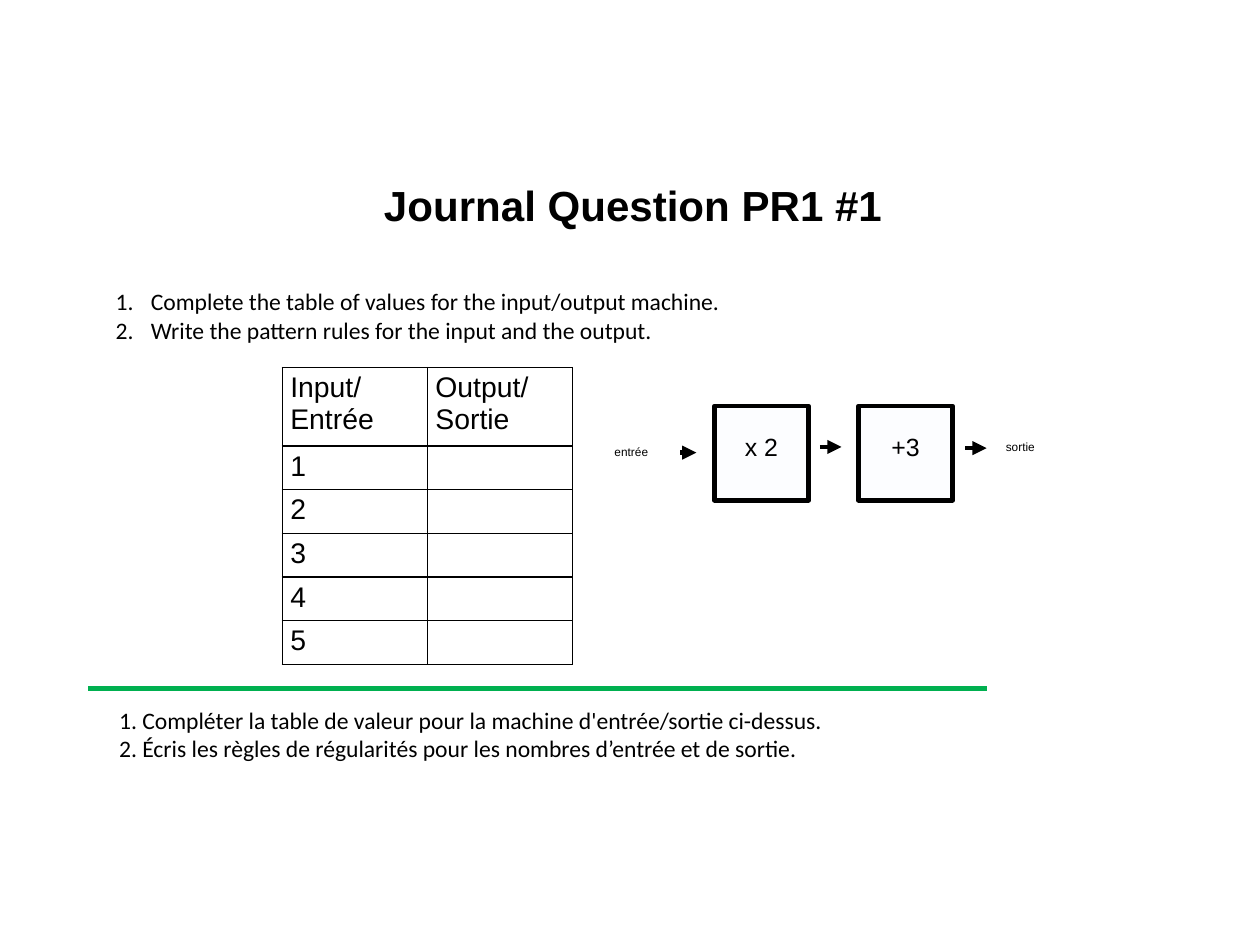
from dataclasses import dataclass

from lxml import etree
from pptx import Presentation
from pptx.dml.color import RGBColor
from pptx.enum.shapes import MSO_CONNECTOR, MSO_SHAPE
from pptx.enum.text import MSO_ANCHOR, MSO_AUTO_SIZE, PP_ALIGN
from pptx.oxml.ns import qn
from pptx.util import Inches, Pt

STRAIGHT = MSO_CONNECTOR.STRAIGHT
RECTANGLE = MSO_SHAPE.RECTANGLE
TOP, MIDDLE = MSO_ANCHOR.TOP, MSO_ANCHOR.MIDDLE
LEFT, CENTER = PP_ALIGN.LEFT, PP_ALIGN.CENTER
NO_AUTOFIT = MSO_AUTO_SIZE.NONE

BLACK, WHITE, GREEN, PALE = "000000", "FFFFFF", "00B050", "FCFDFF"
SQUARE_TOP, SQUARE_SIDE = 3.58, 0.83
HEADINGS = ("Input/ Entrée", "Output/ Sortie")
INPUTS = range(1, 6)
ENGLISH_STEPS = (
    "Complete the table of values for the input/output machine.",
    "Write the pattern rules for the input and the output.",
)
FRENCH_STEPS = (
    "1. Compléter la table de valeur pour la machine d'entrée/sortie ci-dessus.",
    "2. Écris les règles de régularités pour les nombres d’entrée et de sortie.",
)


@dataclass(frozen=True)
class Operation:
    text: str
    left: float


@dataclass(frozen=True)
class Label:
    text: str
    left: float
    top: float
    width: float


@dataclass(frozen=True)
class Line:
    start: float
    end: float
    y: float
    color: str = BLACK
    arrow: bool = True


OPERATIONS = (Operation("x 2", 6.3), Operation("+3", 7.57))
LABELS = (Label("entrée", 5.32, 3.87, 0.64), Label("sortie", 8.77, 3.83, 0.57))
LINES = (
    Line(6.0, 6.14, 3.99),
    Line(7.23, 7.42, 3.94),
    Line(8.51, 8.7, 3.95),
    Line(0.78, 8.7, 6.07, GREEN, arrow=False),
)


def rgb(color: str) -> RGBColor:
    return RGBColor.from_string(color)


def write(paragraph, text: str, size: float, font: str = "Arial",
          bold: bool = False, align: PP_ALIGN = LEFT) -> None:
    paragraph.alignment = align
    paragraph.space_before = Pt(0)
    run = paragraph.add_run()
    run.text = text
    run.font.size = Pt(size)
    run.font.name = font
    run.font.bold = bold
    run.font.color.rgb = rgb(BLACK)


def place(shape, left: float, top: float, width: float, height: float):
    """Move a placeholder and return its text frame, ready for text."""
    shape.left, shape.top = Inches(left), Inches(top)
    shape.width, shape.height = Inches(width), Inches(height)
    frame = shape.text_frame
    frame.auto_size = NO_AUTOFIT
    frame.word_wrap = True
    frame.vertical_anchor = TOP
    return frame


def write_steps(frame, steps: tuple[str, ...], numbered: bool) -> None:
    hanging = Inches(0.31) if numbered else 0
    for index, step in enumerate(steps):
        paragraph = frame.add_paragraph() if index else frame.paragraphs[0]
        write(paragraph, step, 15, "Calibri")
        properties = paragraph._p.get_or_add_pPr()
        properties.set("marL", str(hanging))
        properties.set("indent", str(-hanging))
        if numbered:
            etree.SubElement(properties, qn("a:buFont"), typeface="+mj-lt")
            etree.SubElement(properties, qn("a:buAutoNum"), type="arabicPeriod")
        else:
            etree.SubElement(properties, qn("a:buNone"))


def format_cell(cell, text: str) -> None:
    cell.margin_left = cell.margin_right = Inches(0.07)
    cell.margin_top = cell.margin_bottom = Inches(0.04)
    if text:
        write(cell.text_frame.paragraphs[0], text, 18)
    properties = cell._tc.get_or_add_tcPr()
    for side in ("lnL", "lnR", "lnT", "lnB"):
        border = etree.SubElement(properties, qn(f"a:{side}"), w=str(Pt(1)))
        solid = etree.SubElement(border, qn("a:solidFill"))
        etree.SubElement(solid, qn("a:srgbClr"), val=BLACK)
    cell.fill.solid()
    cell.fill.fore_color.rgb = rgb(WHITE)


def add_values_table(shapes) -> None:
    rows = [HEADINGS] + [(str(value), "") for value in INPUTS]
    table = shapes.add_table(len(rows), len(HEADINGS), Inches(2.49),
                             Inches(3.24), Inches(2.56), Inches(2.59)).table
    table.first_row = table.horz_banding = False
    for column in table.columns:
        column.width = Inches(1.28)
    for index, texts in enumerate(rows):
        table.rows[index].height = Inches(0.38 if index else 0.69)
        for column, text in enumerate(texts):
            format_cell(table.cell(index, column), text)


def add_operation(shapes, operation: Operation) -> None:
    square = shapes.add_shape(RECTANGLE, Inches(operation.left), Inches(SQUARE_TOP),
                              Inches(SQUARE_SIDE), Inches(SQUARE_SIDE))
    square.shadow.inherit = False
    square.fill.solid()
    square.fill.fore_color.rgb = rgb(PALE)
    square.line.color.rgb = rgb(BLACK)
    square.line.width = Pt(3)
    frame = square.text_frame
    frame.vertical_anchor = MIDDLE
    frame.margin_top, frame.margin_bottom = 0, Inches(0.12)
    write(frame.paragraphs[0], operation.text, 15.8, align=CENTER)


def add_label(shapes, label: Label) -> None:
    box = shapes.add_textbox(Inches(label.left), Inches(label.top),
                             Inches(label.width), Inches(0.23))
    box.text_frame.word_wrap = True
    write(box.text_frame.paragraphs[0], label.text, 7.5)


def add_line(shapes, line: Line) -> None:
    connector = shapes.add_connector(STRAIGHT, Inches(line.start), Inches(line.y),
                                     Inches(line.end), Inches(line.y))
    connector.line.color.rgb = rgb(line.color)
    connector.line.width = Pt(3)
    if line.arrow:
        etree.SubElement(connector.line._get_or_add_ln(), qn("a:tailEnd"),
                         type="triangle")
    etree.SubElement(connector._element.spPr, qn("a:effectLst"))


def main() -> None:
    deck = Presentation()
    deck.slide_width, deck.slide_height = Inches(11.11), Inches(8.33)
    slide = deck.slides.add_slide(deck.slide_layouts.get_by_name("Two Content"))
    shapes = slide.shapes
    title, english, french = slide.placeholders

    heading = place(title, 0.92, 1.53, 9.33, 0.55)
    write(heading.paragraphs[0], "Journal Question PR1 #1", 26.7,
          bold=True, align=CENTER)
    write_steps(place(english, 0.92, 2.48, 9.33, 0.61), ENGLISH_STEPS, numbered=True)
    write_steps(place(french, 0.95, 6.17, 7.57, 0.61), FRENCH_STEPS, numbered=False)

    add_values_table(shapes)
    for operation in OPERATIONS:
        add_operation(shapes, operation)
    for label in LABELS:
        add_label(shapes, label)
    for line in LINES:
        add_line(shapes, line)
    deck.save("out.pptx")


if __name__ == "__main__":
    main()
